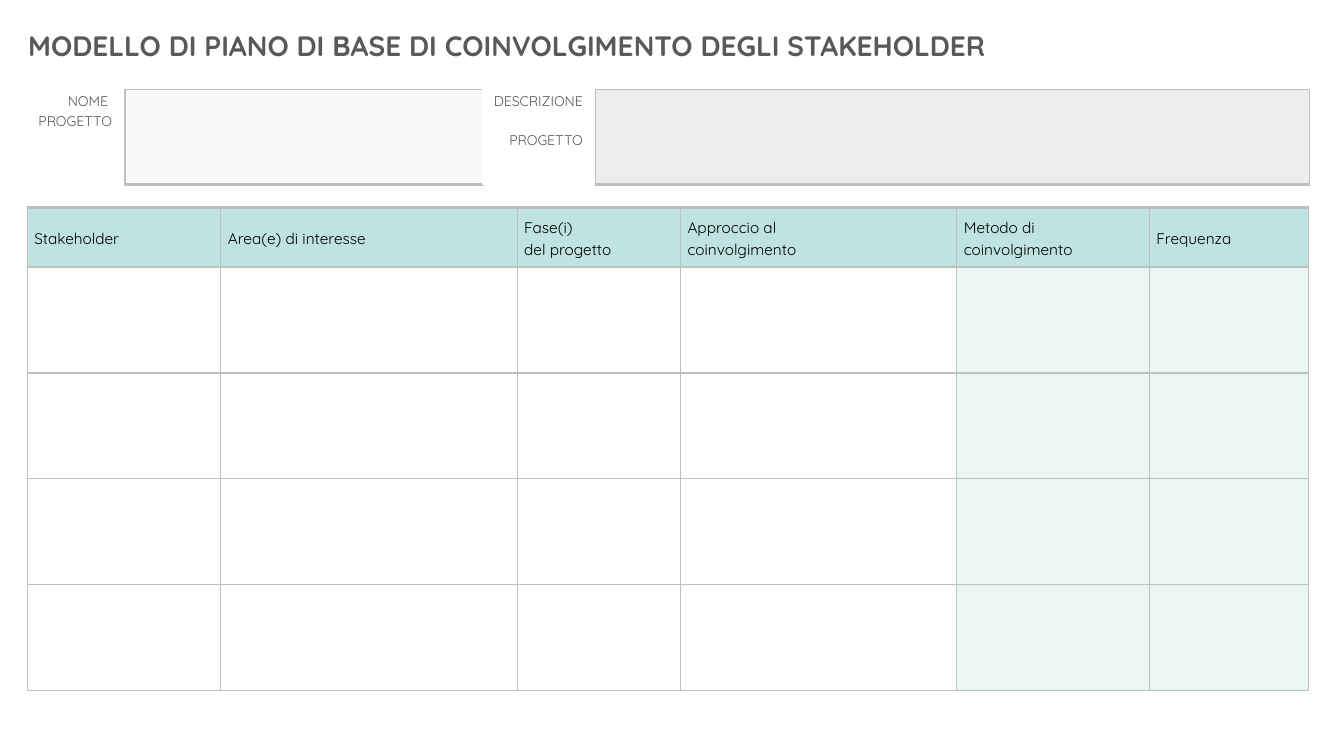
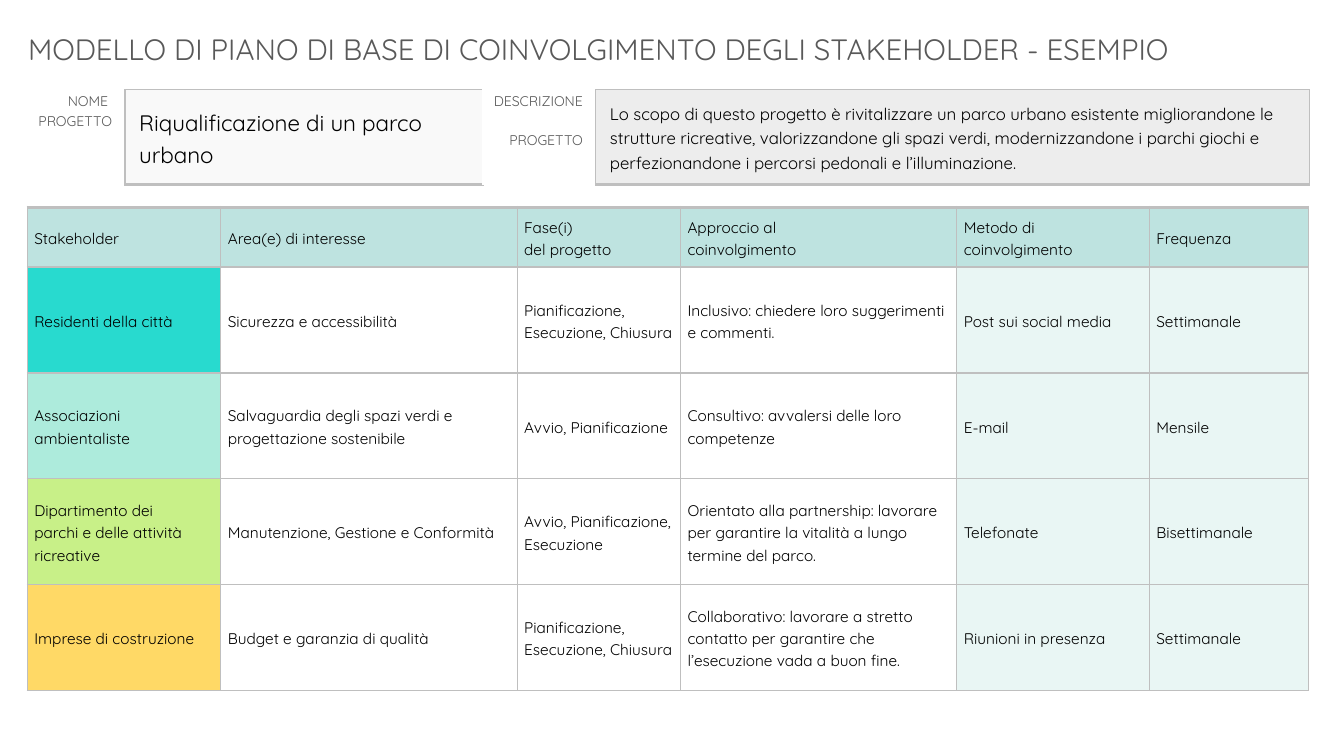
from dataclasses import dataclass
from typing import Any

from lxml import etree
from pptx import Presentation
from pptx import util as u
from pptx.dml.color import RGBColor
from pptx.enum import text
from pptx.oxml import ns


# Theme: colours and type sizes
@dataclass(frozen=True)
class Theme:
    font: str = "Quicksand"
    ink: str = "000000"
    muted: str = "595959"
    rule: str = "BFBFBF"
    white: str = "FFFFFF"
    name_fill: str = "F9F9F9"
    description_fill: str = "EDEDED"
    header_fill: str = "BEE3E0"
    method_fill: str = "E9F6F4"
    label_size: float = 10
    body_size: float = 11
    description_size: float = 12
    name_size: float = 16


@dataclass(frozen=True)
class Field:
    """A labelled box above the plan."""
    lines: tuple[str, ...]
    left: float
    cols: tuple[float, float]
    fill: str
    size: float
    gap: float = 0


@dataclass(frozen=True)
class Stakeholder:
    fill: str
    cells: tuple[str, ...] = ("",) * 6


@dataclass(frozen=True)
class Plan:
    title: str
    title_top: float
    title_size: float
    bold: bool
    values: tuple[str, str]
    rows: tuple[Stakeholder, ...]


T = Theme()
FIELDS = (
    Field(("NOME ", "PROGETTO"), 0.18, (1.06, 3.55), T.name_fill, T.name_size),
    Field(("DESCRIZIONE", "PROGETTO"), 4.79, (1.12, 7.08), T.description_fill,
          T.description_size, gap=14),
)
HEADERS = ("Stakeholder", "Area(e) di interesse", "Fase(i) \vdel progetto",
           "Approccio al \vcoinvolgimento", "Metodo di coinvolgimento", "Frequenza")
COLS = (1.92, 2.94, 1.62, 2.74, 1.91, 1.58)
HEADER_H, ROW_H = 0.59, 1.05
FIELD_TOP, FIELD_H = 0.89, 0.94
GRID = {"L": 1, "R": 1, "T": 1, "B": 1}
TITLE = "MODELLO DI PIANO DI BASE DI COINVOLGIMENTO DEGLI STAKEHOLDER"

PLANS = (
    Plan(TITLE, 0.23, 20, True, ("", ""), (Stakeholder(T.white),) * 4),
    Plan(
        f"{TITLE} - ESEMPIO", 0.26, 21, False,
        ("Riqualificazione di un parco urbano",
         "Lo scopo di questo progetto è rivitalizzare un parco urbano esistente "
         "migliorandone le strutture ricreative, valorizzandone gli spazi verdi, "
         "modernizzandone i parchi giochi e perfezionandone i percorsi pedonali "
         "e l’illuminazione."),
        (
            Stakeholder("28DACF", (
                "Residenti della città", "Sicurezza e accessibilità",
                "Pianificazione, Esecuzione, Chiusura",
                "Inclusivo: chiedere loro suggerimenti e commenti.",
                "Post sui social media", "Settimanale")),
            Stakeholder("ADEBDC", (
                "Associazioni ambientaliste",
                "Salvaguardia degli spazi verdi e progettazione sostenibile",
                "Avvio, Pianificazione",
                "Consultivo: avvalersi delle loro competenze",
                "E-mail", "Mensile")),
            Stakeholder("C8F088", (
                "Dipartimento dei \vparchi e delle attività ricreative",
                "Manutenzione, Gestione e Conformità",
                "Avvio, Pianificazione, Esecuzione",
                "Orientato alla partnership: lavorare per garantire la vitalità "
                "a lungo termine del parco.",
                "Telefonate", "Bisettimanale")),
            Stakeholder("FFD966", (
                "Imprese di costruzione", "Budget e garanzia di qualità",
                "Pianificazione, Esecuzione, Chiusura",
                "Collaborativo: lavorare a stretto contatto per garantire che "
                "l’esecuzione vada a buon fine.",
                "Riunioni in presenza", "Settimanale")),
        ),
    ),
)


# Formatting helpers
def set_all(obj: Any, values: dict[str, Any]) -> None:
    for name, value in values.items():
        setattr(obj, name, value)


def style_font(p: Any, size: float, color: str, bold: bool = False) -> None:
    for r in p.runs:
        set_all(r.font, {"name": T.font, "size": u.Pt(size), "bold": bold})
        r.font.color.rgb = RGBColor.from_string(color)


def set_borders(cell: Any, widths: dict[str, float]) -> None:
    tc_pr = cell._tc.get_or_add_tcPr()
    for side, width in widths.items():
        ln = etree.SubElement(tc_pr, ns.qn(f"a:ln{side}"), w=str(u.Pt(width)))
        fill = etree.SubElement(ln, ns.qn("a:solidFill"))
        etree.SubElement(fill, ns.qn("a:srgbClr"), val=T.rule)


def fill_cell(cell: Any, content: str, fill: str, size: float,
              borders: dict[str, float], indent: float = 0.07) -> None:
    set_borders(cell, borders)
    cell.fill.solid()
    cell.fill.fore_color.rgb = RGBColor.from_string(fill)
    set_all(cell, {
        "margin_left": u.Inches(indent), "margin_right": u.Inches(0.07),
        "margin_top": 0, "margin_bottom": 0,
        "vertical_anchor": text.MSO_ANCHOR.MIDDLE,
    })
    p = cell.text_frame.paragraphs[0]
    p.line_spacing = 1.15
    if content:
        p.text = content
        style_font(p, size, T.ink)


def add_grid(s: Any, left: float, top: float, cols: tuple[float, ...],
             rows: tuple[float, ...]) -> Any:
    frame = s.shapes.add_table(len(rows), len(cols), u.Inches(left), u.Inches(top),
                               u.Inches(sum(cols)), u.Inches(sum(rows)))
    table = frame.table
    set_all(table, {"first_row": False, "horz_banding": False})
    for col, width in zip(table.columns, cols):
        col.width = u.Inches(width)
    for row, height in zip(table.rows, rows):
        row.height = u.Inches(height)
    return table


# Slide parts
def add_title(s: Any, plan: Plan) -> None:
    sp = s.shapes.add_textbox(u.Inches(0.18), u.Inches(plan.title_top),
                              u.Inches(12.96), u.Inches(0.45))
    tf = sp.text_frame
    set_all(tf, {"word_wrap": True, "auto_size": text.MSO_AUTO_SIZE.SHAPE_TO_FIT_TEXT})
    p = tf.paragraphs[0]
    p.text = plan.title
    style_font(p, plan.title_size, T.muted, plan.bold)


def add_field(s: Any, field: Field, value: str) -> None:
    table = add_grid(s, field.left, FIELD_TOP, field.cols, (FIELD_H,))
    label = table.cell(0, 0)
    set_borders(label, {"R": 1})
    label.fill.background()
    set_all(label, {"margin_left": 0, "margin_right": u.Inches(0.13),
                    "margin_top": 0, "margin_bottom": 0})
    label.text = "\n".join(field.lines)
    for i, p in enumerate(label.text_frame.paragraphs):
        set_all(p, {"alignment": text.PP_ALIGN.RIGHT, "line_spacing": 1.15,
                    "space_before": u.Pt(field.gap if i else 0)})
        style_font(p, T.label_size, T.muted)
    fill_cell(table.cell(0, 1), value, field.fill, field.size,
              GRID | {"B": 2.25}, indent=0.14)


def add_plan_table(s: Any, rows: tuple[Stakeholder, ...]) -> None:
    table = add_grid(s, 0.27, 2.06, COLS, (HEADER_H,) + (ROW_H,) * len(rows))
    for c, header in enumerate(HEADERS):
        fill_cell(table.cell(0, c), header, T.header_fill, T.body_size, GRID | {"T": 3})
    for r, row in enumerate(rows, start=1):
        fills = (row.fill,) + (T.white,) * 3 + (T.method_fill,) * 2
        for c, (content, fill) in enumerate(zip(row.cells, fills)):
            fill_cell(table.cell(r, c), content, fill, T.body_size, GRID)


def main() -> None:
    prs = Presentation()
    set_all(prs, {"slide_width": u.Inches(13.33), "slide_height": u.Inches(7.5)})
    for plan in PLANS:
        s = prs.slides.add_slide(prs.slide_layouts[6])
        add_title(s, plan)
        for field, value in zip(FIELDS, plan.values):
            add_field(s, field, value)
        add_plan_table(s, plan.rows)
    prs.save("out.pptx")


if __name__ == "__main__":
    main()
